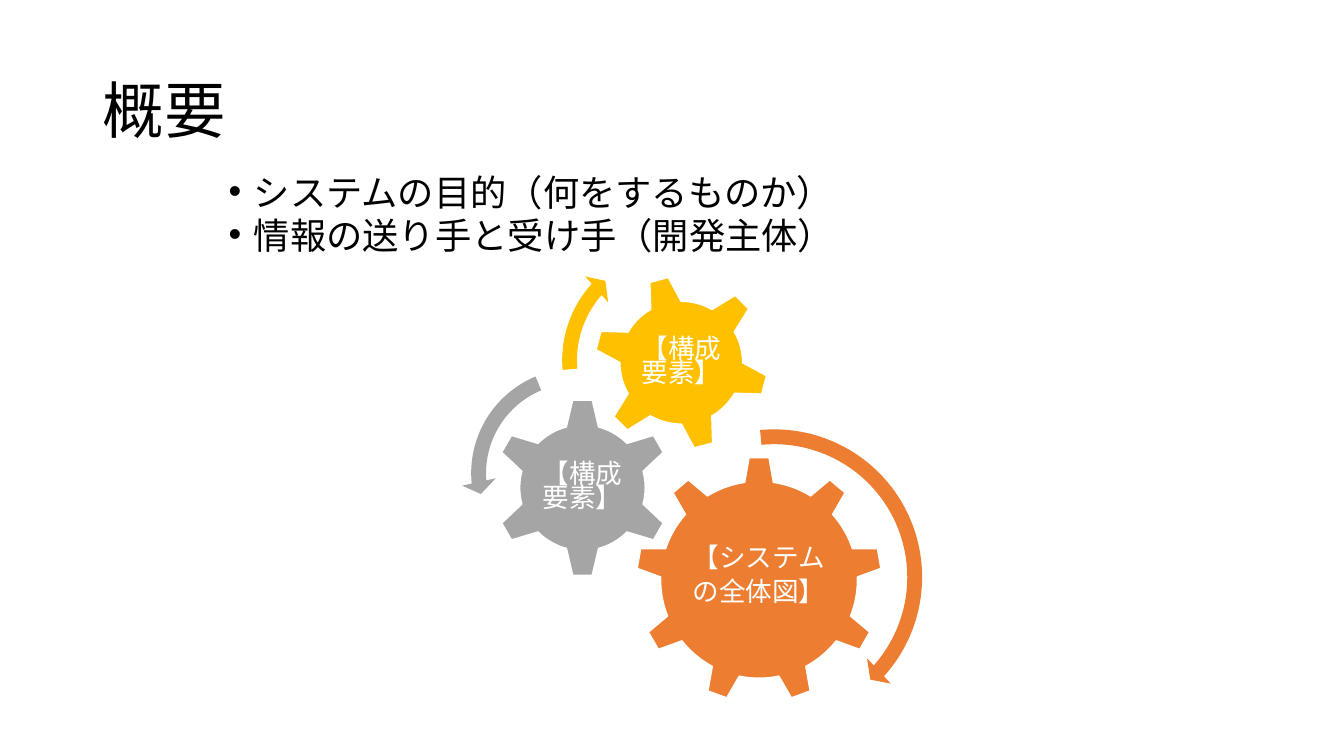
from lxml import etree
from pptx import Presentation
from pptx.dml.color import RGBColor
from pptx.enum.shapes import MSO_SHAPE
from pptx.enum.text import MSO_ANCHOR, MSO_AUTO_SIZE, PP_ALIGN
from pptx.oxml.ns import qn
from pptx.util import Cm, Pt

GEAR_6, GEAR_9 = MSO_SHAPE.GEAR_6, MSO_SHAPE.GEAR_9
CLOCKWISE = MSO_SHAPE.CIRCULAR_ARROW
COUNTERCLOCKWISE = MSO_SHAPE.LEFT_CIRCULAR_ARROW
MIDDLE, TOP = MSO_ANCHOR.MIDDLE, MSO_ANCHOR.TOP
LEFT, CENTER = PP_ALIGN.LEFT, PP_ALIGN.CENTER
NO_AUTOFIT = MSO_AUTO_SIZE.NONE

FONT = "Noto Sans CJK JP"
BLACK, WHITE = "000000", "FFFFFF"
ORANGE, GRAY, YELLOW = "ED7D31", "A5A5A5", "FFC000"


def color(hex_text):
    return RGBColor.from_string(hex_text)


def write(frame, lines, size, fill=BLACK, align=LEFT, anchor=TOP, spacing=0.9,
          before=0, after=0, bullet=False, inset=None):
    frame.word_wrap = True
    frame.auto_size = NO_AUTOFIT
    frame.vertical_anchor = anchor
    if inset is not None:
        frame.margin_left = frame.margin_right = Cm(inset)
        frame.margin_top = frame.margin_bottom = Cm(inset)
    for index, line in enumerate(lines):
        paragraph = frame.add_paragraph() if index else frame.paragraphs[0]
        paragraph.alignment = align
        paragraph.line_spacing = spacing
        paragraph.space_before, paragraph.space_after = Pt(before), Pt(after)
        run = paragraph.add_run()
        run.text = line
        run.font.name = FONT
        run.font.size = Pt(size)
        run.font.color.rgb = color(fill)
        etree.SubElement(run.font._element, qn("a:ea"), typeface=FONT)
        if bullet:
            properties = paragraph._p.get_or_add_pPr()
            properties.set("marL", str(Cm(0.64)))
            properties.set("indent", str(-Cm(0.64)))
            etree.SubElement(properties, qn("a:buFont"), typeface="Arial")
            etree.SubElement(properties, qn("a:buChar"), char="•")


class SlideBuilder:
    def __init__(self, deck):
        self.slide = deck.slides.add_slide(deck.slide_layouts[5])

    def title(self, text, left, top, width, height):
        heading = self.slide.shapes.title
        heading.left, heading.top = Cm(left), Cm(top)
        heading.width, heading.height = Cm(width), Cm(height)
        write(heading.text_frame, [text], 44, anchor=MIDDLE)

    def text(self, lines, left, top, width, height, **style):
        box = self.slide.shapes.add_textbox(Cm(left), Cm(top), Cm(width), Cm(height))
        write(box.text_frame, lines, **style)

    def shape(self, kind, left, top, size, fill):
        shape = self.slide.shapes.add_shape(kind, Cm(left), Cm(top), Cm(size), Cm(size))
        shape.shadow.inherit = False
        shape.fill.solid()
        shape.fill.fore_color.rgb = color(fill)
        return shape

    def gear(self, kind, left, top, size, fill, rotation, lines, label_box):
        gear = self.shape(kind, left, top, size, fill)
        gear.rotation = rotation
        gear.line.color.rgb = color(WHITE)
        gear.line.width = Pt(1)
        self.text(lines, *label_box, size=19, fill=WHITE, align=CENTER,
                  anchor=MIDDLE, spacing=0.75, after=6.65, inset=0.08)

    def arrow(self, kind, left, top, size, fill, adjustments):
        arrow = self.shape(kind, left, top, size, fill)
        arrow.line.fill.background()
        for index, value in enumerate(adjustments):
            arrow.adjustments[index] = value


def main():
    deck = Presentation()
    deck.slide_width, deck.slide_height = Cm(33.87), Cm(19.05)
    overview = SlideBuilder(deck)
    overview.title("概要", 2.34, 1.02, 29.21, 3.68)
    overview.text(["システムの目的（何をするものか）", "情報の送り手と受け手（開発主体）"],
                  5.51, 4.45, 22.86, 2.59, size=25.9, spacing=0.72, before=8, bullet=True)

    component = ["【構成要素】"]
    gears = [
        (GEAR_9, 16.03, 11.51, 6.2, ORANGE, 0, ["【システム", "の全体図】"],
         (17.27, 12.95, 3.71, 3.2)),
        (GEAR_6, 12.42, 10.03, 4.52, GRAY, 0, component, (13.56, 11.18, 2.24, 2.24)),
        (GEAR_6, 14.96, 6.93, 4.42, YELLOW, 345, component, (15.93, 7.9, 2.49, 2.49)),
    ]
    for gear in gears:
        overview.gear(*gear)

    arrows = [
        (CLOCKWISE, 15.54, 10.57, 7.95, ORANGE, (0.047, 2.99, 25.131, 158.679, 0.055)),
        (COUNTERCLOCKWISE, 11.63, 9.04, 5.77, GRAY, (0.065, 4.3, 104.891, 148.378, 0.075)),
        (CLOCKWISE, 13.92, 5.97, 6.22, YELLOW, (0.06, 3.941, 133.138, 105.082, 0.07)),
    ]
    for arrow in arrows:
        overview.arrow(*arrow)
    deck.save("out.pptx")


if __name__ == "__main__":
    main()
